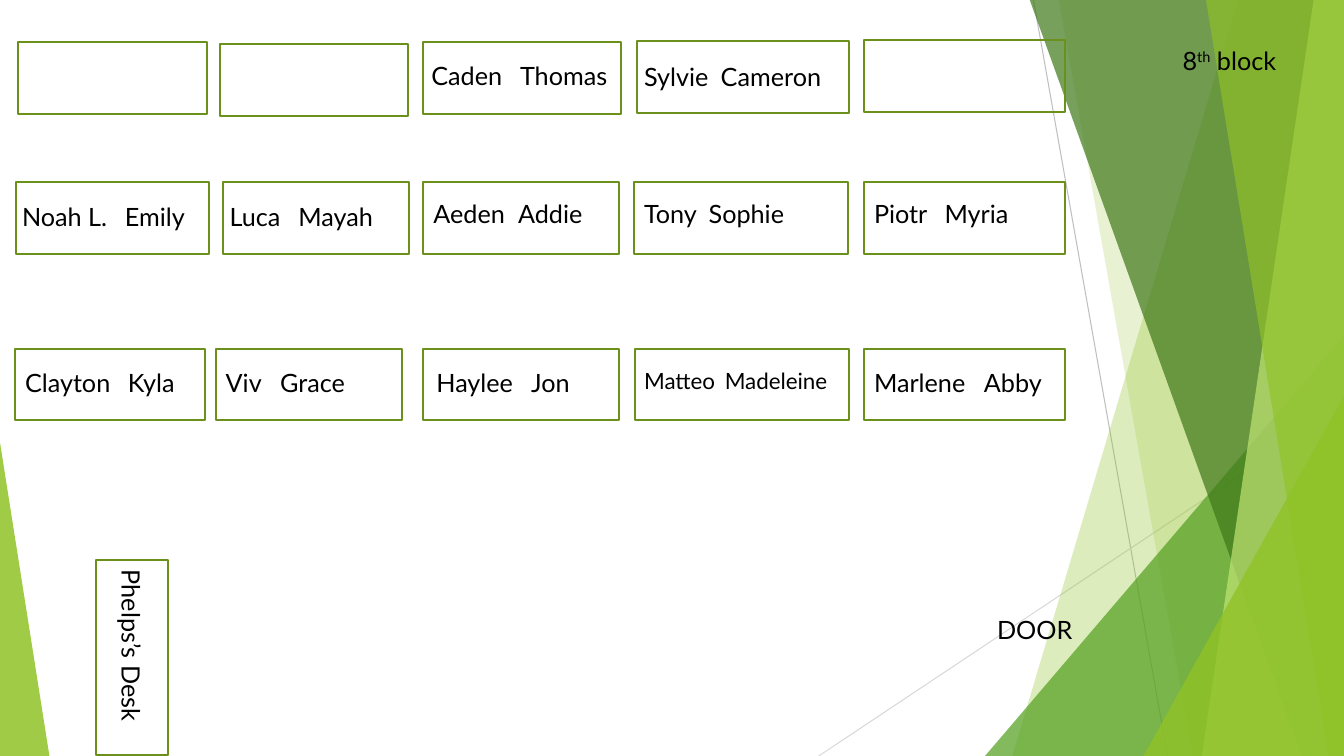
"""Build the classroom seating chart for the 8th block."""
from lxml import etree
from pptx import Presentation
from pptx.dml.color import RGBColor
from pptx.enum.shapes import MSO_CONNECTOR, MSO_SHAPE
from pptx.enum.text import MSO_AUTO_SIZE
from pptx.oxml.ns import qn
from pptx.util import Inches, Pt

STRAIGHT = MSO_CONNECTOR.STRAIGHT
RECTANGLE = MSO_SHAPE.RECTANGLE
TRIANGLE = MSO_SHAPE.ISOSCELES_TRIANGLE
GROW = MSO_AUTO_SIZE.SHAPE_TO_FIT_TEXT
COLORS = {
    "lime": "90C226", "green": "54A021", "forest": "3F7819", "pale": "C0E474",
    "desk": "6B901C", "text": "000000", "gray": "BFBFBF", "light gray": "D9D9D9",
}

presentation = Presentation()
presentation.slide_width = Inches(13.33)
presentation.slide_height = Inches(7.5)
slide = presentation.slides.add_slide(presentation.slide_layouts[6])
COLUMNS, ROWS = 13.33, 7.5
COLUMN = presentation.slide_width / COLUMNS
ROW = presentation.slide_height / ROWS
TEXT_HEIGHT, DESK_HEIGHT = 0.4, 0.71


def place(*lengths):
    """Turn alternating column and row counts into slide lengths."""
    return [round(length * (ROW if index % 2 else COLUMN)) for index, length in enumerate(lengths)]


def add_text(text, left, top, width, size=18, rotation=0, tab=None):
    """Add a text box; parts between carets are superscript."""
    box = slide.shapes.add_textbox(*place(left, top, width, TEXT_HEIGHT))
    box.rotation = rotation
    box.text_frame.word_wrap = True
    box.text_frame.auto_size = GROW
    paragraph = box.text_frame.paragraphs[0]
    if tab:
        tab_list = etree.SubElement(paragraph._p.get_or_add_pPr(), qn("a:tabLst"))
        etree.SubElement(tab_list, qn("a:tab"), pos=str(round(tab * COLUMN)), algn="l")
    for index, part in enumerate(text.split("^")):
        run = paragraph.add_run()
        run.text = part
        run.font.name = "Lato"
        run.font.size = Pt(size)
        run.font.color.rgb = RGBColor.from_string(COLORS["text"])
        if index % 2:
            run.font._element.set("baseline", "30000")


for start, end, color in [
    ((10.25, 0), (11.58, ROWS), "gray"),
    ((COLUMNS, 4.03), (8.12, ROWS), "light gray"),
]:
    line = slide.shapes.add_connector(STRAIGHT, *place(*start, *end))
    line.line.color.rgb = RGBColor.from_string(COLORS[color])
    line.line.width = Pt(0.75)
    etree.SubElement(line._element.spPr, qn("a:effectLst"))

# Bands give top and bottom edges; triangles give left, top, width and apex.
decorations = [
    ("band", (12.28, 10.04), "lime", 30),
    ("band", (10.5, 11.83), "lime", 20),
    ("triangle", (9.77, 3.33, 3.56, 1), "green", 72),
    ("band", (10.21, 12.91), "forest", 70),
    ("band", (13.03, 11.92), "pale", 70),
    ("band", (11.96, 13.18), "lime", 65),
    ("triangle", (11.34, 3.93, 1.99, 1), "lime", 80),
    ("triangle", (0, 4.39, 0.49, 0), "lime", 85),
]
for kind, lengths, color, opacity in decorations:
    if kind == "band":
        top_left, bottom_left = lengths
        builder = slide.shapes.build_freeform(*place(top_left, -0.01))
        corners = [(COLUMNS, -0.01), (COLUMNS, ROWS), (bottom_left, ROWS)]
        builder.add_line_segments([place(*corner) for corner in corners], close=True)
        shape = builder.convert_to_shape()
    else:
        left, top, width, apex = lengths
        shape = slide.shapes.add_shape(TRIANGLE, *place(left, top, width, ROWS - top))
        shape.adjustments[0] = apex
    shape.shadow.inherit = False
    shape.line.fill.background()
    shape.fill.solid()
    shape.fill.fore_color.rgb = RGBColor.from_string(COLORS[color])
    color_element = shape.fill._xPr.find(qn("a:solidFill"))[0]
    etree.SubElement(color_element, qn("a:alpha"), val=str(opacity * 1000))

desks = [
    (0.18, 0.42, 1.87, 0), (2.18, 0.44, 1.87, 0), (4.2, 0.42, 1.96, 0),
    (6.32, 0.41, 2.1, 0), (8.57, 0.4, 1.99, 0),
    (0.16, 1.81, 1.91, 0), (2.21, 1.81, 1.85, 0), (4.2, 1.81, 1.94, 0),
    (6.29, 1.81, 2.12, 0), (8.57, 1.81, 1.99, 0),
    (0.15, 3.46, 1.88, 0), (2.14, 3.46, 1.85, 0), (4.2, 3.46, 1.94, 0),
    (6.3, 3.46, 2.12, 0), (8.57, 3.46, 1.99, 0),
    (0.34, 6.17, 1.94, 90),
]
for left, top, width, rotation in desks:
    desk = slide.shapes.add_shape(RECTANGLE, *place(left, top, width, DESK_HEIGHT))
    desk.rotation = rotation
    desk.shadow.inherit = False
    desk.fill.background()
    desk.line.color.rgb = RGBColor.from_string(COLORS["desk"])
    desk.line.width = Pt(1.5)

add_text("DOOR", 9.79, 6.05, 2.01)
add_text("Phelps’s Desk", 0.3, 6.36, 2.01, rotation=90)
add_text("8^th^ block", 11.63, 0.4, 1.41)

students = [
    ("Caden", "Thomas", 4.18, 0.55, 1.98, 0.88),
    ("Sylvie", "Cameron", 6.29, 0.56, 2.12, 0.76),
    ("Noah L.", "Emily", 0.12, 1.95, 1.95, 1.02),
    ("Luca", "Mayah", 2.18, 1.95, 1.72, 0.68),
    ("Aeden", "Addie", 4.2, 1.92, 1.72, 0.84),
    ("Tony", "Sophie", 6.29, 1.92, 1.72, 0.64),
    ("Piotr", "Myria", 8.57, 1.92, 1.72, 0.7),
    ("Clayton", "Kyla", 0.15, 3.59, 1.83, 1.02),
    ("Viv", "Grace", 2.14, 3.59, 1.72, 0.54),
    ("Haylee", "Jon", 4.23, 3.59, 1.72, 0.94),
    ("Matteo", "Madeleine", 6.29, 3.59, 2.15, 0.8),
    ("Marlene", "Abby", 8.57, 3.59, 1.95, 1.09),
]
for first, second, left, top, width, tab in students:
    size = 16 if first == "Matteo" else 18
    add_text(f"{first}\t{second}", left, top, width, size=size, tab=tab)

presentation.save("out.pptx")
